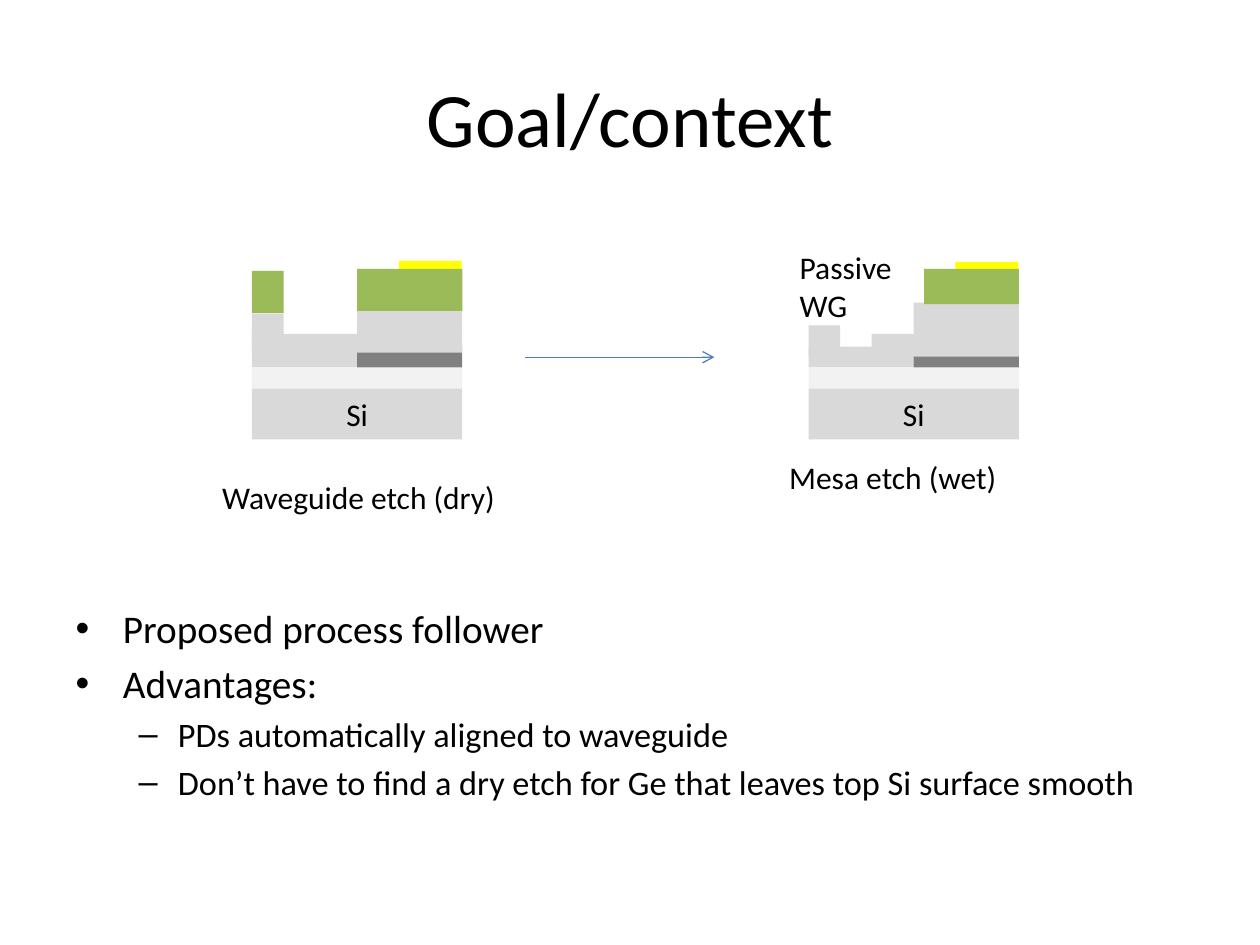
from lxml.etree import SubElement
from pptx import Presentation
from pptx.dml.color import RGBColor
from pptx.enum.shapes import MSO_CONNECTOR, MSO_SHAPE
from pptx.enum.text import MSO_ANCHOR, MSO_AUTO_SIZE, PP_ALIGN
from pptx.oxml.ns import qn
from pptx.util import Cm, Pt

COLORS = {
    "text": "000000",
    "silicon": "D9D9D9",
    "oxide": "F2F2F2",
    "buried": "808080",
    "germanium": "9BBB59",
    "mask": "FFFF00",
    "arrow": "4B7EBC",
}


def write(frame, lines, size, align=None):
    frame.text = "\n".join(lines)
    for paragraph in frame.paragraphs:
        paragraph.alignment = align
        for run in paragraph.runs:
            run.font.name = "Calibri"
            run.font.size = Pt(size)
            run.font.color.rgb = RGBColor.from_string(COLORS["text"])


def add_layer(left, top, width, height, material):
    kind = MSO_SHAPE.SNIP_2_SAME_RECTANGLE if material == "germanium" else MSO_SHAPE.RECTANGLE
    layer = slide.shapes.add_shape(kind, Cm(left), Cm(top), Cm(width), Cm(height))
    if material == "germanium":
        layer.adjustments[0] = 0
        layer.adjustments[1] = 0
    layer.shadow.inherit = False
    layer.fill.solid()
    layer.fill.fore_color.rgb = RGBColor.from_string(COLORS[material])
    layer.line.fill.background()
    return layer


prs = Presentation()
prs.slide_width, prs.slide_height = Cm(25.4), Cm(19.05)
slide = prs.slides.add_slide(prs.slide_layouts[1])

title = slide.shapes.title
title.left, title.top, title.width, title.height = Cm(1.27), Cm(0.76), Cm(22.86), Cm(3.18)
write(title.text_frame, ["Goal/context"], 44, PP_ALIGN.CENTER)
title.text_frame.vertical_anchor = MSO_ANCHOR.MIDDLE

points = slide.placeholders[1]
points.left, points.top, points.width, points.height = Cm(1.27), Cm(12.06), Cm(22.86), Cm(5.5)
write(points.text_frame, [
    "Proposed process follower",
    "Advantages:",
    "PDs automatically aligned to waveguide",
    "Don’t have to find a dry etch for Ge that leaves top Si surface smooth",
], 22.4)
points.text_frame.auto_size = MSO_AUTO_SIZE.NONE
for advantage in points.text_frame.paragraphs[2:]:
    advantage.level = 1
    advantage.runs[0].font.size = Pt(19.6)

STACK, HALF = 4.24, 2.12
etch_steps = [
    (5.08, [
        (0, 6.73, STACK, 0.38, "silicon"),
        (2.96, 5.26, 1.27, 0.21, "mask"),
        (0, 5.46, 0.64, 0.85, "germanium"),
        (HALF, 6.1, HALF, 0.64, "silicon"),
        (HALF, 5.42, HALF, 0.85, "germanium"),
        (0, 6.32, 0.64, 0.64, "silicon"),
    ]),
    (16.3, [
        (1.27, 6.73, 2.97, 0.46, "silicon"),
        (2.96, 5.28, 1.27, 0.21, "mask"),
        (HALF, 6.1, HALF, 0.64, "silicon"),
        (2.33, 5.42, 1.91, 0.71, "germanium"),
        (0, 6.56, 0.64, 0.64, "silicon"),
    ]),
]
for stack_left, etched_layers in etch_steps:
    add_layer(stack_left, 6.99, HALF, 0.42, "silicon")
    substrate = add_layer(stack_left, 7.83, STACK, 1.03, "silicon")
    write(substrate.text_frame, ["Si"], 18, PP_ALIGN.CENTER)
    substrate.text_frame.vertical_anchor = MSO_ANCHOR.TOP
    add_layer(stack_left, 7.41, STACK, 0.42, "oxide")
    add_layer(stack_left + HALF, 6.99, HALF, 0.42, "buried")
    for offset, top, width, height, material in etched_layers:
        add_layer(stack_left + offset, top, width, height, material)

for label, left, top, width, height in [
    ("Waveguide etch (dry)", 4.23, 9.52, 6.14, 1.03),
    ("Mesa etch (wet)", 15.66, 9.1, 5.93, 1.03),
    ("Passive WG", 15.87, 4.87, 2.96, 1.8),
]:
    caption = slide.shapes.add_textbox(Cm(left), Cm(top), Cm(width), Cm(height))
    caption.text_frame.word_wrap = True
    write(caption.text_frame, [label], 18)

etch_arrow = slide.shapes.add_connector(
    MSO_CONNECTOR.STRAIGHT, Cm(10.58), Cm(7.2), Cm(14.4), Cm(7.2))
etch_arrow.line.color.rgb = RGBColor.from_string(COLORS["arrow"])
etch_arrow.line.width = Pt(0.75)
SubElement(etch_arrow.line._get_or_add_ln(), qn("a:tailEnd"), type="arrow")
SubElement(etch_arrow._element.spPr, qn("a:effectLst"))

prs.save("out.pptx")
